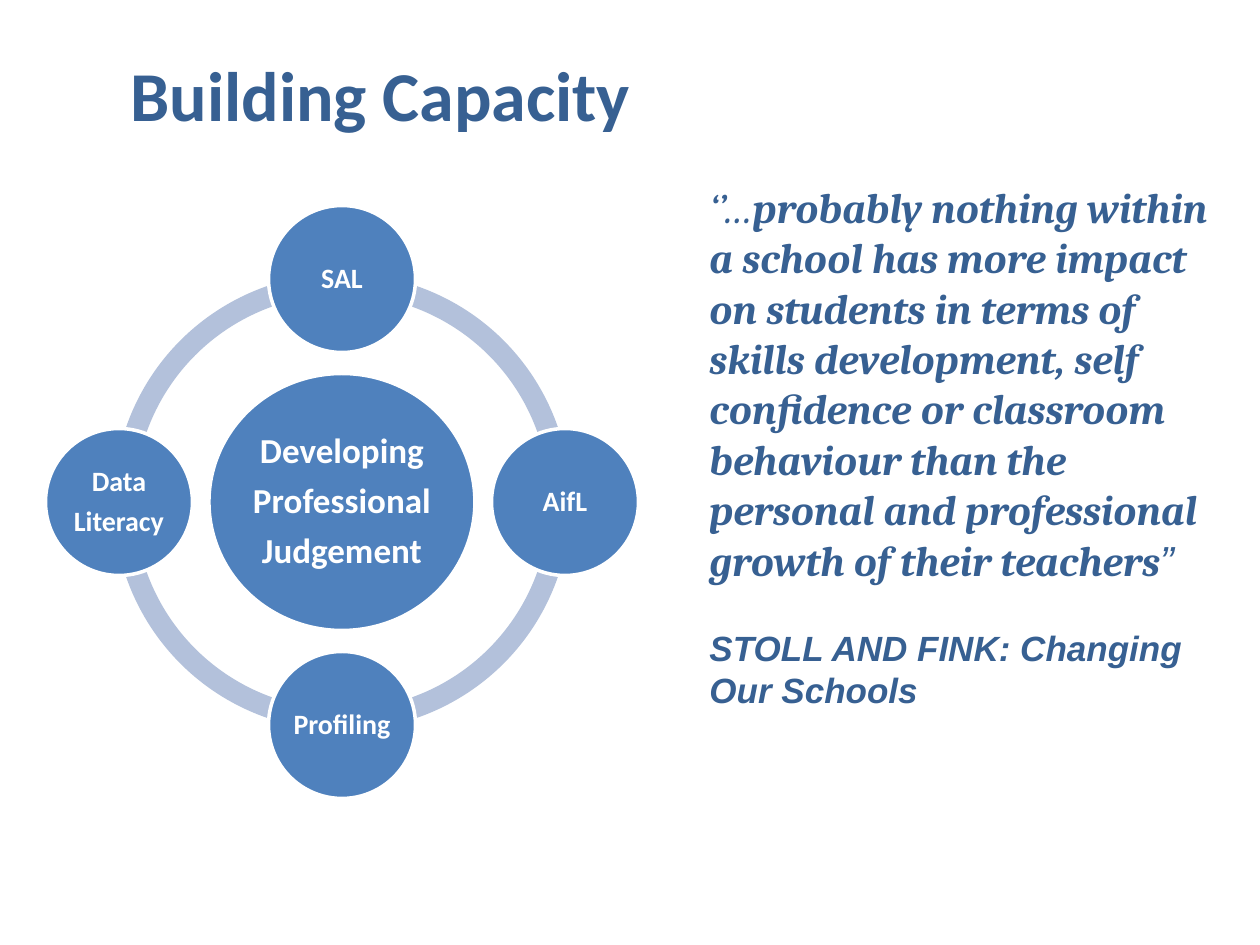
from dataclasses import dataclass

from pptx import Presentation
from pptx.dml.color import RGBColor
from pptx.enum.shapes import MSO_SHAPE
from pptx.enum.text import MSO_ANCHOR, MSO_AUTO_SIZE, PP_ALIGN
from pptx.util import Emu, Pt

ELLIPSE = MSO_SHAPE.OVAL
BLOCK_ARC = MSO_SHAPE.BLOCK_ARC
TOP, MIDDLE = MSO_ANCHOR.TOP, MSO_ANCHOR.MIDDLE
LEFT, CENTER = PP_ALIGN.LEFT, PP_ALIGN.CENTER
NO_FIT = MSO_AUTO_SIZE.NONE

EMU_PER_PX = 914400 / 126
TITLE_ONLY = 5
ADJUSTMENT_PER_DEGREE = 0.6
RING_THICKNESS = 0.046
CENTER_X, CENTER_Y = 342, 502
ORBIT = 223
RING_SIZE = 457
NODE_SIZE = 147
HUB_WIDTH, HUB_HEIGHT = 266, 257

NODES = [
    (0, -1, ["SAL"]),
    (1, 0, ["AifL"]),
    (0, 1, ["Profiling"]),
    (-1, 0, ["Data", "Literacy"]),
]
HUB_LINES = ["Developing", "Professional", "Judgement"]
QUOTE = (
    "probably nothing within a school has more impact on students in terms of "
    "skills development, self confidence or classroom behaviour than the "
    "personal and professional growth of their teachers"
)
QUOTE_SOURCE = "STOLL AND FINK: Changing Our Schools"


@dataclass(frozen=True)
class Theme:
    ink: RGBColor = RGBColor(0x37, 0x60, 0x92)
    circle: RGBColor = RGBColor(0x4F, 0x81, 0xBD)
    ring: RGBColor = RGBColor(0xB3, 0xC1, 0xDB)
    white: RGBColor = RGBColor(0xFF, 0xFF, 0xFF)
    heading_font: str = "Calibri"
    quote_font: str = "Cambria"
    source_font: str = "Arial"
    title_size: int = 40
    quote_size: int = 24
    source_size: int = 20
    hub_size: int = 20
    node_size: int = 16


THEME = Theme()


def px(value):
    return Emu(round(value * EMU_PER_PX))


def frame_around(x, y, width, height):
    return px(x - width / 2), px(y - height / 2), px(width), px(height)


def set_frame(frame, anchor=TOP, inset=None):
    frame.word_wrap = True
    frame.auto_size = NO_FIT
    frame.vertical_anchor = anchor
    if inset is not None:
        frame.margin_left = frame.margin_right = px(inset)
        frame.margin_top = frame.margin_bottom = px(inset)


def add_span(para, text, font, size, color, bold=True, italic=False):
    span = para.add_run()
    span.text = text
    span.font.name = font
    span.font.size = Pt(size)
    span.font.color.rgb = color
    span.font.bold = bold
    span.font.italic = italic


def add_title(page, text):
    title = page.shapes.title
    title.left, title.top, title.width, title.height = px(63), px(45), px(635), px(572)
    set_frame(title.text_frame)
    para = title.text_frame.paragraphs[0]
    para.alignment = CENTER
    add_span(para, text, THEME.heading_font, THEME.title_size, THEME.ink)


def add_quote(page):
    box = page.shapes.add_textbox(px(697), px(175), px(535), px(674))
    set_frame(box.text_frame)
    para = box.text_frame.paragraphs[0]
    para.alignment = LEFT
    for text, font, bold in [
        ("‘’…", THEME.quote_font, False),
        (QUOTE, THEME.quote_font, True),
        ("”", THEME.source_font, False),
    ]:
        add_span(para, text, font, THEME.quote_size, THEME.ink, bold=bold, italic=True)
    para = box.text_frame.add_paragraph()
    para.alignment = LEFT
    para.space_before = Pt(24)
    add_span(para, QUOTE_SOURCE, THEME.source_font, THEME.source_size, THEME.ink, italic=True)


def add_ring_arc(page, start):
    arc = page.shapes.add_shape(
        BLOCK_ARC, *frame_around(CENTER_X, CENTER_Y, RING_SIZE, RING_SIZE)
    )
    arc.shadow.inherit = False
    arc.adjustments[0] = start * ADJUSTMENT_PER_DEGREE
    arc.adjustments[1] = (start + 90) % 360 * ADJUSTMENT_PER_DEGREE
    arc.adjustments[2] = RING_THICKNESS
    arc.fill.solid()
    arc.fill.fore_color.rgb = THEME.ring
    arc.line.fill.background()


def add_circle(page, x, y, width, height, lines, size, inset):
    circle = page.shapes.add_shape(ELLIPSE, *frame_around(x, y, width, height))
    circle.shadow.inherit = False
    circle.fill.solid()
    circle.fill.fore_color.rgb = THEME.circle
    circle.line.color.rgb = THEME.white
    circle.line.width = Pt(2)
    frame = circle.text_frame
    set_frame(frame, anchor=MIDDLE, inset=inset)
    for index, line in enumerate(lines):
        para = frame.add_paragraph() if index else frame.paragraphs[0]
        para.alignment = CENTER
        para.line_spacing = 0.9
        para.space_after = Pt(size * 0.35)
        add_span(para, line, THEME.heading_font, size, THEME.white)


def add_cycle(page):
    for start in (180, 90, 0, 270):
        add_ring_arc(page, start)
    add_circle(
        page, CENTER_X, CENTER_Y, HUB_WIDTH, HUB_HEIGHT, HUB_LINES, THEME.hub_size, inset=4
    )
    for across, down, lines in NODES:
        x, y = CENTER_X + across * ORBIT, CENTER_Y + down * ORBIT
        add_circle(page, x, y, NODE_SIZE, NODE_SIZE, lines, THEME.node_size, inset=2)


def main():
    deck = Presentation()
    deck.slide_width, deck.slide_height = px(1260), px(945)
    page = deck.slides.add_slide(deck.slide_layouts[TITLE_ONLY])
    add_title(page, "Building Capacity")
    add_quote(page)
    add_cycle(page)
    deck.save("out.pptx")


if __name__ == "__main__":
    main()
